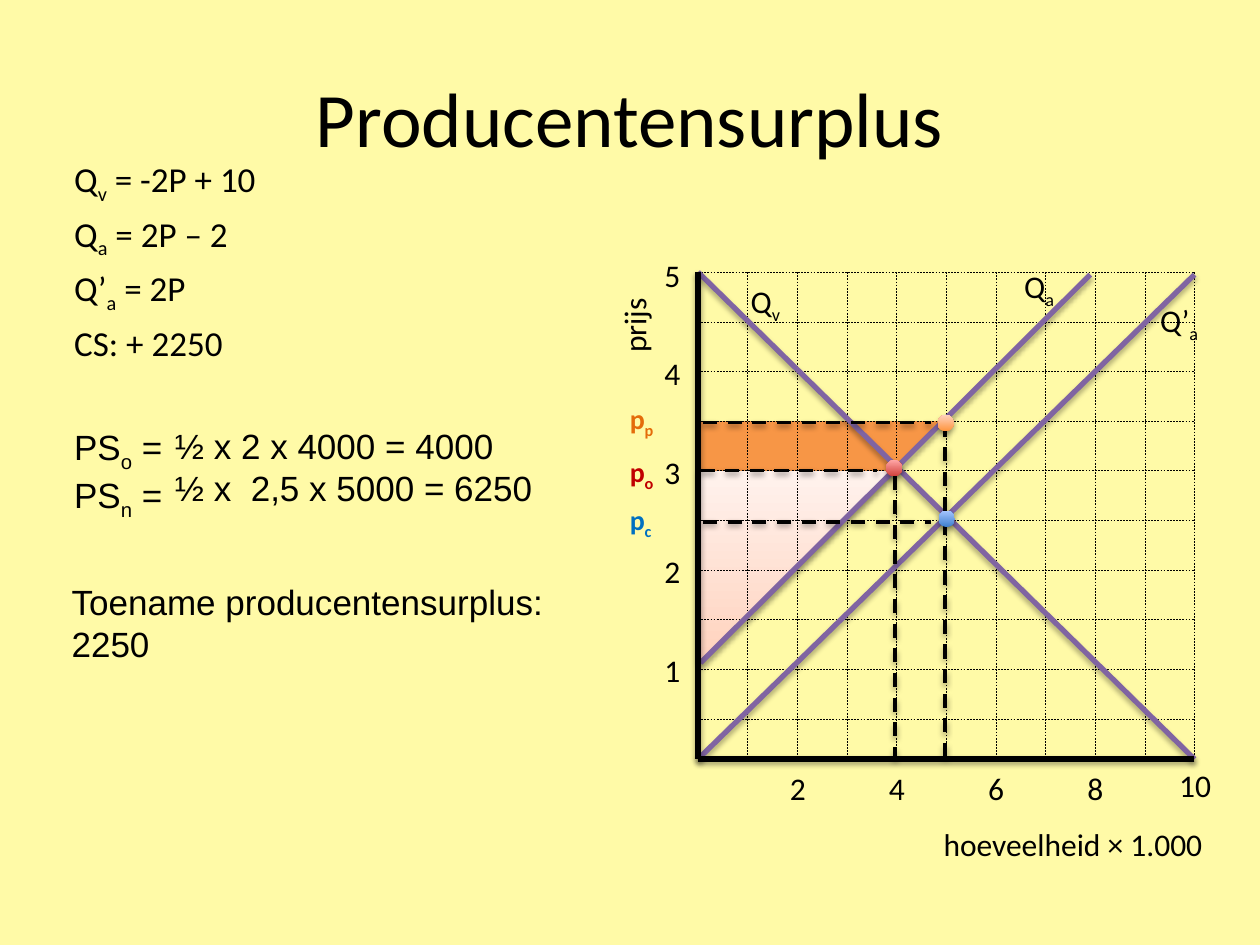
from pptx import Presentation
from pptx.dml.color import RGBColor
from pptx.enum.dml import MSO_LINE
from pptx.enum.shapes import MSO_CONNECTOR, MSO_SHAPE
from pptx.enum.text import MSO_ANCHOR, PP_ALIGN
from pptx.oxml.ns import qn
from pptx.util import Inches, Pt
from lxml import etree

DASH = MSO_LINE.DASH
STRAIGHT = MSO_CONNECTOR.STRAIGHT
OVAL = MSO_SHAPE.OVAL
MIDDLE = MSO_ANCHOR.MIDDLE
LEFT, CENTER = PP_ALIGN.LEFT, PP_ALIGN.CENTER

HUES = {
    "paper": "FFFAA7", "ink": "000000", "curve": "8064A2", "gain": "F79646",
    "old": "C00000", "buyer": "0070C0", "seller": "E46C0A",
}
FADES = {
    "pink": ("FFD2BD", "FFF2ED"), "red": ("D1403C", "FFA6A5"),
    "blue": ("3F80CE", "A4C4FF"), "orange": ("FF953E", "FFD2BD"),
}
WIDTH, HEIGHT = 10, 7.5
BASE = 9.81


class Board:
    """Draw on one slide, with text in percent of it and the graph in grid cells."""

    left, top, cell, dot_size = 5.54, 2.16, 0.394, 0.13

    def __init__(self, deck):
        self.slide = deck.slides.add_slide(deck.slide_layouts[6])
        self.shapes = self.slide.shapes
        fill = self.slide.background.fill
        fill.solid()
        fill.fore_color.rgb = self.hue("paper")

    def hue(self, name):
        return RGBColor.from_string(HUES[name])

    def spot(self, col, row):
        return Inches(self.left + col * self.cell), Inches(self.top + row * self.cell)

    def shade(self, shape, alpha=0, drop=0):
        effects = etree.SubElement(shape._element.spPr, qn("a:effectLst"))
        if alpha:
            shadow = etree.SubElement(
                effects, qn("a:outerShdw"), blurRad="40000", dist=str(drop),
                dir="5400000", rotWithShape="0")
            color = etree.SubElement(shadow, qn("a:srgbClr"), val=HUES["ink"])
            etree.SubElement(color, qn("a:alpha"), val=str(alpha * 1000))

    def fade(self, shape, name):
        fill = shape.fill
        fill.gradient()
        fill.gradient_angle = 90
        for stop, color in zip(fill.gradient_stops, FADES[name]):
            stop.color.rgb = RGBColor.from_string(color)

    def line(self, start, end, width=0.25, hue="ink", dash=False, shadow=()):
        link = self.shapes.add_connector(STRAIGHT, *self.spot(*start), *self.spot(*end))
        link.line.width = Pt(width)
        link.line.color.rgb = self.hue(hue)
        if dash:
            link.line.dash_style = DASH
        self.shade(link, *shadow)

    def area(self, points, hue=None, fade=None, shadow=()):
        spots = [self.spot(*point) for point in points]
        form = self.shapes.build_freeform(*spots[0])
        form.add_line_segments(spots[1:], close=True)
        shape = form.convert_to_shape()
        if fade:
            self.fade(shape, fade)
        else:
            shape.fill.solid()
            shape.fill.fore_color.rgb = self.hue(hue)
        shape.line.fill.background()
        self.shade(shape, *shadow)

    def dot(self, col, row, fade):
        size = Inches(self.dot_size)
        x, y = self.spot(col, row)
        shape = self.shapes.add_shape(OVAL, x - size // 2, y - size // 2, size, size)
        self.fade(shape, fade)
        shape.line.fill.background()
        self.shade(shape, 35, 23000)

    def text(self, x, y, w, h, words, size=18, font="Calibri", hue="ink", bold=False,
             wrap=False, align=LEFT, gap=0, turn=0, anchor=None):
        box = self.shapes.add_textbox(
            Inches(x * WIDTH / 100), Inches(y * HEIGHT / 100),
            Inches(w * WIDTH / 100), Inches(h * HEIGHT / 100))
        box.rotation = turn
        frame = box.text_frame
        frame.word_wrap = wrap
        if anchor:
            frame.vertical_anchor = anchor
        frame.text = words.replace("_", "")
        for para, row in zip(frame.paragraphs, words.split("\n")):
            para.alignment = align
            para.space_before = Pt(gap)
            parts = row.split("_")
            para.runs[0].text = parts[0]
            for part in parts[1:]:
                para.add_run().text = part
            for place, run in enumerate(para.runs):
                run.font.size = Pt(size)
                run.font.name = font
                run.font.bold = bold
                run.font.color.rgb = self.hue(hue)
                if place % 2:
                    run.font._element.set("baseline", "-25000")


def graph(board):
    """Draw the surplus areas, grid, curves, guides and labels."""
    soft, deep = (38, 20000), (35, 23000)
    board.area([(0, 3), (0, 4), (3.95, 4), (4.95, 3)], hue="gain")
    board.area([(0, 4), (0, 7.87), (3.96, 4)], fade="pink", shadow=soft)
    for row in range(10):
        board.line((0, row), (10, row), dash=True)
    for col in range(1, 11):
        board.line((col, 0), (col, BASE), dash=True)

    for start, end in (((0, 0), (10, BASE)), ((0, BASE), (10, 0.05)),
                       ((0.05, 7.87), (7.9, 0.05))):
        board.line(start, end, 3, "curve", shadow=deep)
    for end in ((0, 0), (10, BASE)):
        board.line(end, (0, BASE), 3, shadow=soft)
    for start, end in (((0.05, 4), (3.6, 4)), ((0.1, 5.03), (4.7, 5.03)),
                       ((3.97, 4.1), (3.97, BASE)), ((4.97, 3.03), (4.97, BASE)),
                       ((0.1, 3.03), (4.7, 3.03))):
        board.line(start, end, 2, dash=True, shadow=soft)
    for col, row, fade in ((3.95, 3.95, "red"), (5.01, 4.97, "blue"),
                           (4.99, 3.04, "orange")):
        board.dot(col, row, fade)

    for price in range(1, 6):
        board.text(51.75, 26.4 + 10.45 * (5 - price), 3.3, 5.33, str(price))
    for step in range(4):
        board.text(61.7 + 7.87 * step, 80.67, 3.3, 5.33, str(2 * step + 2))
    board.text(92.6, 80.4, 4.6, 5.33, "10")
    board.text(73.9, 86.67, 22.8, 5.33, "hoeveelheid × 1.000")
    board.text(47.1, 31.73, 6.4, 5.33, "prijs", turn=270)
    for x, y, w, name in ((58.6, 29.2, 4.5, "Q_v"), (91.1, 31.2, 5.1, "Q’_a"),
                          (80.3, 27.6, 4.5, "Q_a")):
        board.text(x, y, w, 5.33, name)
    for y, name, hue in ((47.47, "p_o", "old"), (52.53, "p_c", "buyer"),
                         (41.87, "p_p", "seller")):
        board.text(49, y, 4, 4.93, name, 16, hue=hue, bold=True)


def main():
    """Build and save the slide."""
    deck = Presentation()
    deck.slide_width, deck.slide_height = Inches(WIDTH), Inches(HEIGHT)
    board = Board(deck)
    graph(board)
    board.text(5, 4, 90, 16.67, "Producentensurplus", 44, wrap=True,
               align=CENTER, anchor=MIDDLE)
    board.text(4.9, 16, 44.2, 27.87,
               "Q_v_ = -2P + 10\nQ_a_ = 2P – 2\nQ’_a_ = 2P\nCS: + 2250",
               20, wrap=True, gap=4)
    board.text(4.9, 44.4, 9.6, 10.27, "PS_o_ =\nPS_n_ =", 20, "Arial", wrap=True)
    board.text(12.9, 44.27, 31.3, 14.4,
               "½ x 2 x 4000 = 4000\n½ x  2,5 x 5000 = 6250", 20, "Arial")
    board.text(4.7, 60.8, 39.7, 14.4, "Toename producentensurplus:\n2250", 20, "Arial")
    deck.save("out.pptx")


if __name__ == "__main__":
    main()
